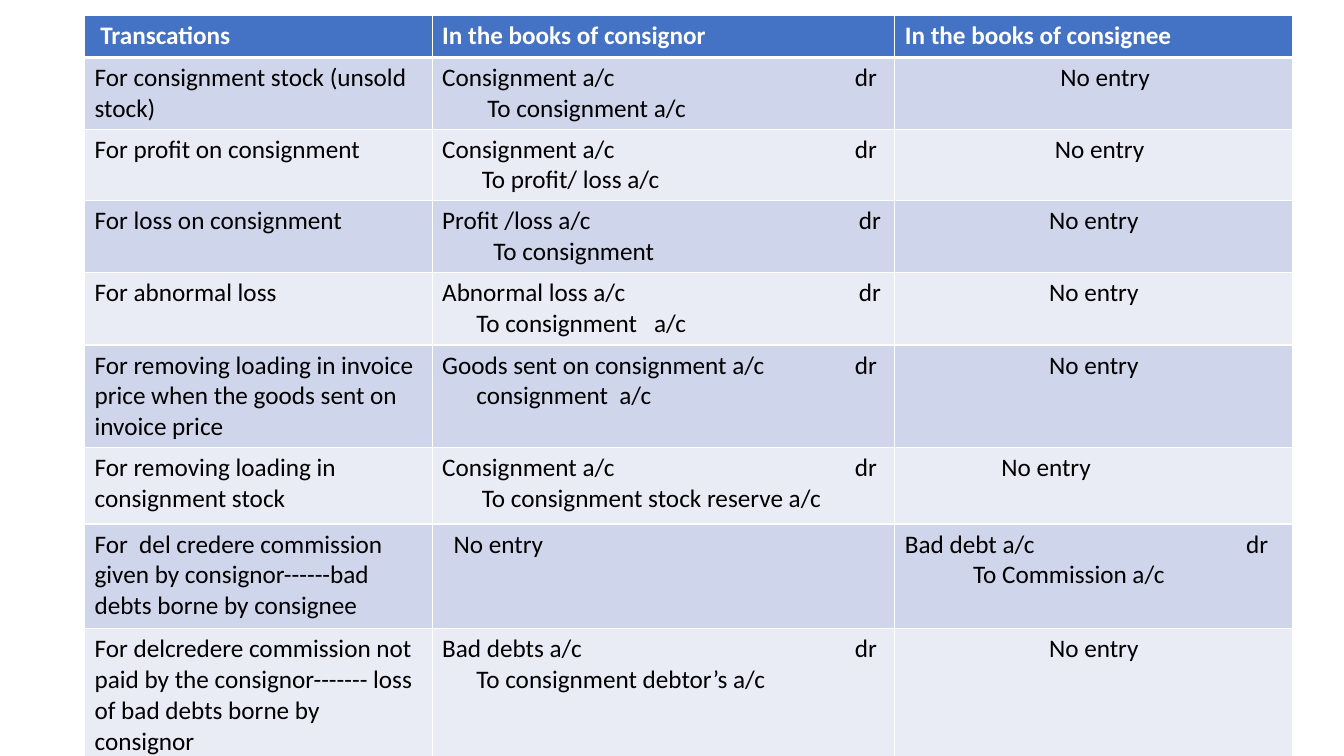
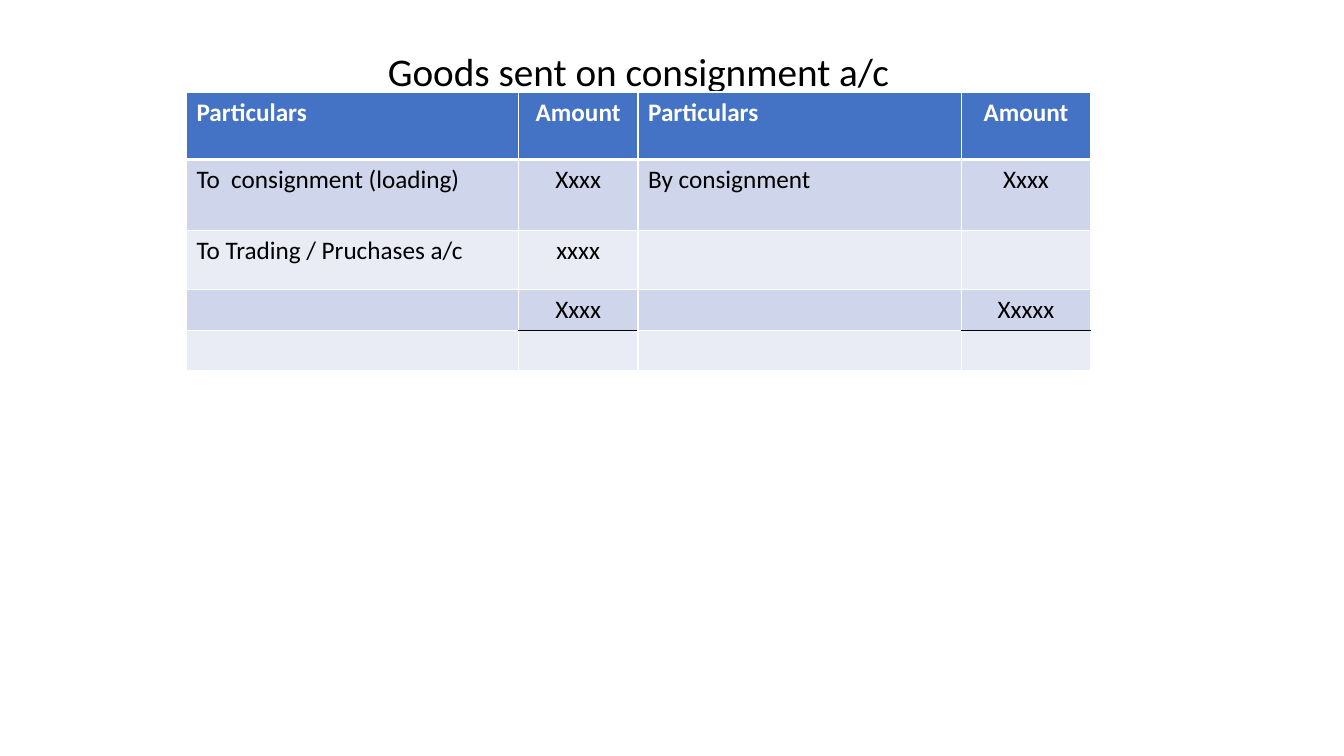
from dataclasses import dataclass

from lxml.etree import SubElement
from pptx import Presentation
from pptx.dml.color import RGBColor
from pptx.enum.text import MSO_AUTO_SIZE as AutoSize, PP_ALIGN as Align
from pptx.oxml.ns import qn
from pptx.util import Cm, Pt

# Shared style
FONT = "Calibri"
WHITE, BLACK = "FFFFFF", "000000"
HEADER_FILL = "4472C4"
BAND_FILLS = ("CFD5EA", "E9EBF5")
THIN, THICK = 1, 3


@dataclass
class Line:
    text: str
    align: Align = Align.LEFT
    indent: float = 0
    tab: float = 0


def colour(code):
    return RGBColor.from_string(code)


def centred(text, indent=0):
    return [Line(text, Align.CENTER, indent)]


def indented(text, indent):
    return [Line(text, indent=indent)]


def journal(debit, credit, indent, tab=10.4):
    """A debit line with its mark at a tab stop, above an indented credit line."""
    return [Line(f"{debit}\tdr", tab=tab), Line(credit, indent=indent)]


def write(para, text, size=18, bold=False, color=BLACK, align=Align.LEFT,
          indent=0, tab=0):
    para.alignment = align
    props = para._p.get_or_add_pPr()
    if indent:
        props.set("marL", str(Cm(indent)))
    if tab:
        stops = SubElement(props, qn("a:tabLst"))
        SubElement(stops, qn("a:tab"), pos=str(Cm(tab)), algn="l")
    span = para.add_run()
    span.text = text
    span.font.name = FONT
    span.font.size = Pt(size)
    span.font.bold = bold
    span.font.color.rgb = colour(color)


def set_borders(cell, **special):
    """White thin edges, except those given as edge=(colour, width)."""
    props = cell._tc.get_or_add_tcPr()
    for edge in "LRTB":
        code, width = special.get(edge, (WHITE, THIN))
        line = SubElement(props, qn(f"a:ln{edge}"), w=str(Pt(width)))
        fill = SubElement(line, qn("a:solidFill"))
        SubElement(fill, qn("a:srgbClr"), val=code)


def fill_cell(cell, content, fill, **text_format):
    cell.fill.solid()
    cell.fill.fore_color.rgb = colour(fill)
    lines = [Line(content)] if isinstance(content, str) else content
    frame = cell.text_frame
    for number, line in enumerate(lines):
        if not line.text:
            continue
        para = frame.add_paragraph() if number else frame.paragraphs[0]
        write(para, line.text, align=line.align, indent=line.indent,
              tab=line.tab, **text_format)


def add_banded_table(page, left, top, widths, heights, rows, ruled=()):
    """ruled: (row, column) of the cells with a black line below."""
    table = page.shapes.add_table(
        len(rows), len(widths), Cm(left), Cm(top),
        Cm(sum(widths)), Cm(sum(heights))).table
    for column, width in zip(table.columns, widths):
        column.width = Cm(width)
    for row, height in zip(table.rows, heights):
        row.height = Cm(height)

    for r, contents in enumerate(rows):
        for c, content in enumerate(contents):
            cell = table.cell(r, c)
            special = {}
            if r == 0:
                special["B"] = (WHITE, THICK)
            if r == 1:
                special["T"] = (WHITE, THICK)
            if (r, c) in ruled:
                special["B"] = (BLACK, THIN)
            if (r - 1, c) in ruled:
                special["T"] = (BLACK, THIN)
            set_borders(cell, **special)
            if r == 0:
                fill_cell(cell, content, HEADER_FILL, bold=True, color=WHITE)
            else:
                fill_cell(cell, content, BAND_FILLS[(r - 1) % 2])


def add_title(page, left, top, width, height, text):
    box = page.shapes.add_textbox(Cm(left), Cm(top), Cm(width), Cm(height))
    frame = box.text_frame
    frame.word_wrap = True
    frame.auto_size = AutoSize.SHAPE_TO_FIT_TEXT
    write(frame.paragraphs[0], text, size=28, align=Align.CENTER)


# Slide 1: entries in both sets of books
def entries_page(page, left=2.13, top=0.38):
    no_entry = centred("No entry")
    rows = [
        [" Transcations", "In the books of consignor", "In the books of consignee"],
        ["For consignment stock (unsold stock)",
         journal("Consignment a/c", "To consignment a/c", 1.14),
         centred("No entry", 0.57)],
        ["For profit on consignment",
         journal("Consignment a/c", "To profit/ loss a/c", 1),
         centred("No entry", 0.29)],
        ["For loss on consignment",
         journal("Profit /loss a/c", "To consignment", 1.29, tab=10.5), no_entry],
        ["For abnormal loss",
         journal("Abnormal loss a/c", "To consignment   a/c", 0.86, tab=10.5),
         no_entry],
        ["For removing loading in invoice price when the goods sent on invoice price",
         journal("Goods sent on consignment a/c", "consignment  a/c", 0.86),
         no_entry],
        ["For removing loading in consignment stock",
         journal("Consignment a/c", "To consignment stock reserve a/c", 1),
         indented("No entry", 2.43)],
        ["For  del credere commission given by consignor------bad debts "
         "borne by consignee",
         indented("No entry", 0.29),
         journal("Bad debt a/c", "To Commission a/c", 1.72, tab=8.6)],
        ["For delcredere commission not paid by the consignor------- loss of "
         "bad debts borne by consignor",
         journal("Bad debts a/c", "To consignment debtor’s a/c", 0.86), no_entry],
    ]
    add_banded_table(page, left, top, [8.76, 11.66, 10.03],
                     [1.07, 1.8, 1.8, 1.8, 1.83, 2.57, 1.93, 2.64, 3.33], rows)


# Slide 2: ledger account
def ledger_page(page, left=4.7, top=1.07):
    widths = [8.36, 3.02, 8.15, 3.25]
    add_title(page, left, top, sum(widths), 1.45, "Goods sent on consignment a/c")
    amount, total = centred("Amount"), centred("Xxxx")
    rows = [
        ["Particulars", amount, "Particulars", amount],
        ["To  consignment (loading)", total, "By consignment", total],
        ["To Trading / Pruchases a/c", centred("xxxx"), "", ""],
        ["", total, "", centred("Xxxxx")],
        ["", "", "", ""],
    ]
    add_banded_table(page, left, top + 1.25, widths,
                     [1.7, 1.78, 1.5, 1.02, 1.02], rows,
                     ruled={(3, 1), (3, 3)})


def main():
    deck = Presentation()
    deck.slide_width, deck.slide_height = Cm(33.87), Cm(19.05)
    for build in (entries_page, ledger_page):
        build(deck.slides.add_slide(deck.slide_layouts[6]))
    deck.save("out.pptx")


if __name__ == "__main__":
    main()
